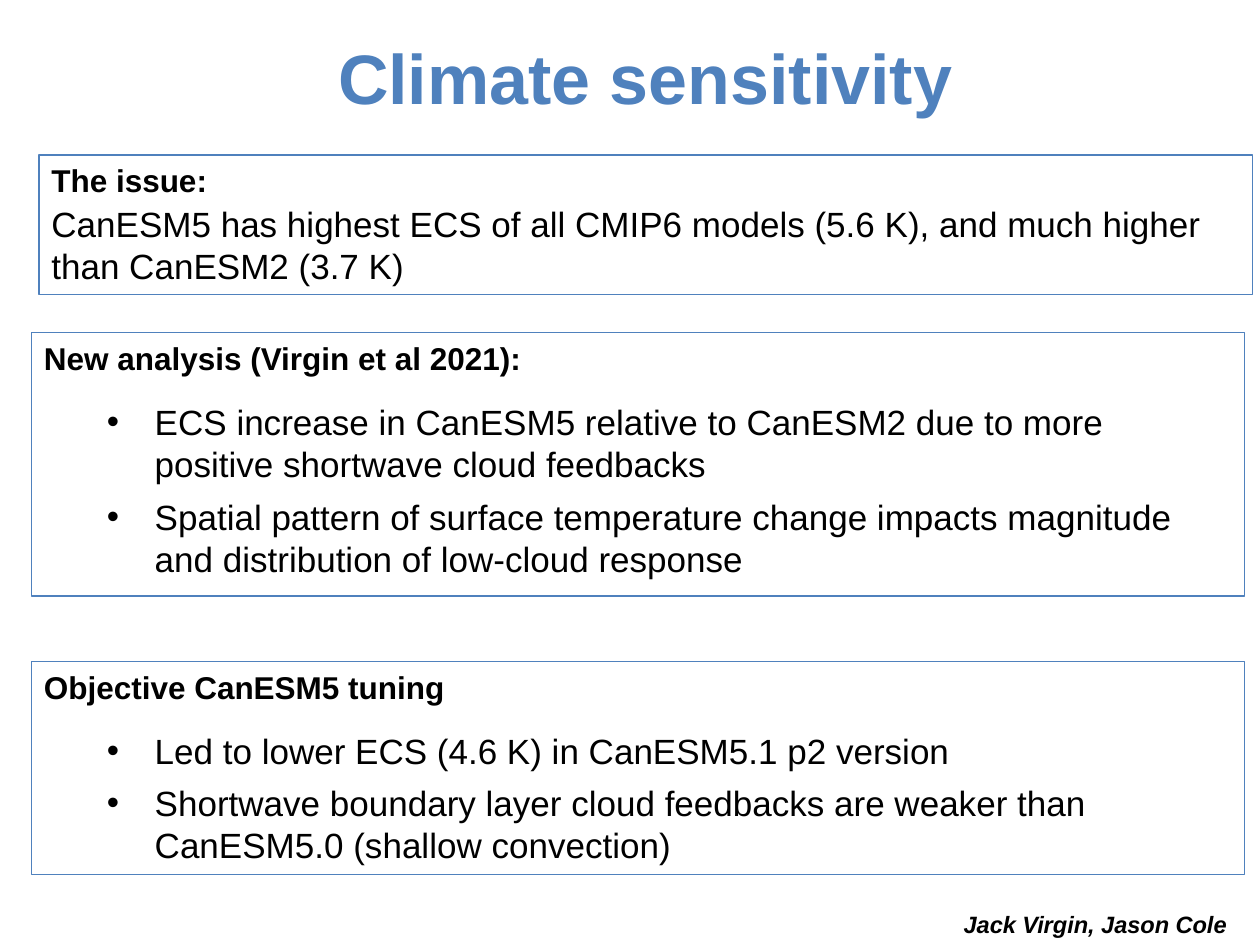
from lxml import etree
from pptx import Presentation
from pptx.dml.color import RGBColor
from pptx.enum import shapes, text
from pptx.oxml import ns
from pptx.util import Inches, Pt

BLUE, BLACK = "4F81BD", "000000"
PANEL_WIDTH = 9.63
HEADING_GAP = 13.6  # points between a heading and its bullets

# left, top, height, heading, space after heading, body lines, bulleted
PANELS = [
    (0.31, 1.23, 1.11, "The issue:", 2.2,
     ["CanESM5 has highest ECS of all CMIP6 models (5.6 K), and much higher "
      "than CanESM2 (3.7 K)"], False),
    (0.25, 2.64, 2.09, "New analysis (Virgin et al 2021):", HEADING_GAP,
     ["ECS increase in CanESM5 relative to CanESM2 due to more positive "
      "shortwave cloud feedbacks",
      "Spatial pattern of surface temperature change impacts magnitude "
      "and distribution of low-cloud response"], True),
    (0.25, 5.25, 1.69, "Objective CanESM5 tuning", HEADING_GAP,
     ["Led to lower ECS (4.6 K) in CanESM5.1 p2 version",
      "Shortwave boundary layer cloud feedbacks are weaker than "
      "CanESM5.0 (shallow convection)"], True),
]


def color(hex_value):
    return RGBColor.from_string(hex_value)


def add_run(paragraph, words, size, hex_value=BLACK, bold=False, italic=False):
    run = paragraph.add_run()
    run.text = words
    font = run.font
    font.name, font.size = "Arial", Pt(size)
    font.bold, font.italic = bold, italic
    font.color.rgb = color(hex_value)


def add_bullet(paragraph):
    properties = paragraph._p.get_or_add_pPr()
    properties.set("marL", str(Inches(0.88)))
    properties.set("indent", str(Inches(-0.38)))
    font = etree.SubElement(properties, ns.qn("a:buFont"))
    font.set("typeface", "Arial")
    bullet = etree.SubElement(properties, ns.qn("a:buChar"))
    bullet.set("char", "•")


def add_label(slide, left, top, width, height, words, size,
              align=text.PP_ALIGN.LEFT, anchor=text.MSO_ANCHOR.TOP, **style):
    box = slide.shapes.add_textbox(
        Inches(left), Inches(top), Inches(width), Inches(height))
    frame = box.text_frame
    frame.word_wrap = True
    frame.vertical_anchor = anchor
    paragraph = frame.paragraphs[0]
    paragraph.alignment = align
    add_run(paragraph, words, size, **style)


def add_panel(slide, left, top, height, heading, gap, lines, bulleted):
    shape = slide.shapes.add_shape(
        shapes.MSO_SHAPE.RECTANGLE,
        Inches(left), Inches(top), Inches(PANEL_WIDTH), Inches(height))
    shape.shadow.inherit = False
    shape.fill.background()
    shape.line.color.rgb = color(BLUE)
    shape.line.width = Pt(0.75)

    # Heading
    frame = shape.text_frame
    frame.word_wrap = True
    frame.vertical_anchor = text.MSO_ANCHOR.TOP
    paragraph = frame.paragraphs[0]
    paragraph.alignment = text.PP_ALIGN.LEFT
    paragraph.space_after = Pt(gap)
    add_run(paragraph, heading, 18, bold=True)

    # Body
    for line in lines:
        paragraph = frame.add_paragraph()
        paragraph.alignment = text.PP_ALIGN.LEFT
        paragraph.space_after = Pt(6 if bulleted else 2.2)
        if bulleted:
            paragraph.level = 1
            add_bullet(paragraph)
        add_run(paragraph, line, 20)


def main():
    presentation = Presentation()
    presentation.slide_width = Inches(10)
    presentation.slide_height = Inches(7.5)
    slide = presentation.slides.add_slide(presentation.slide_layouts[6])

    # Title
    add_label(slide, -0.02, -0.02, 10.28, 1.25, "Climate sensitivity", 40,
              align=text.PP_ALIGN.CENTER, anchor=text.MSO_ANCHOR.MIDDLE,
              hex_value=BLUE, bold=True)

    # Credit
    add_label(slide, 7.55, 7.17, 2.54, 0.33, "Jack Virgin, Jason Cole", 13.5,
              bold=True, italic=True)

    # Panels
    for panel in PANELS:
        add_panel(slide, *panel)

    presentation.save("out.pptx")


if __name__ == "__main__":
    main()
